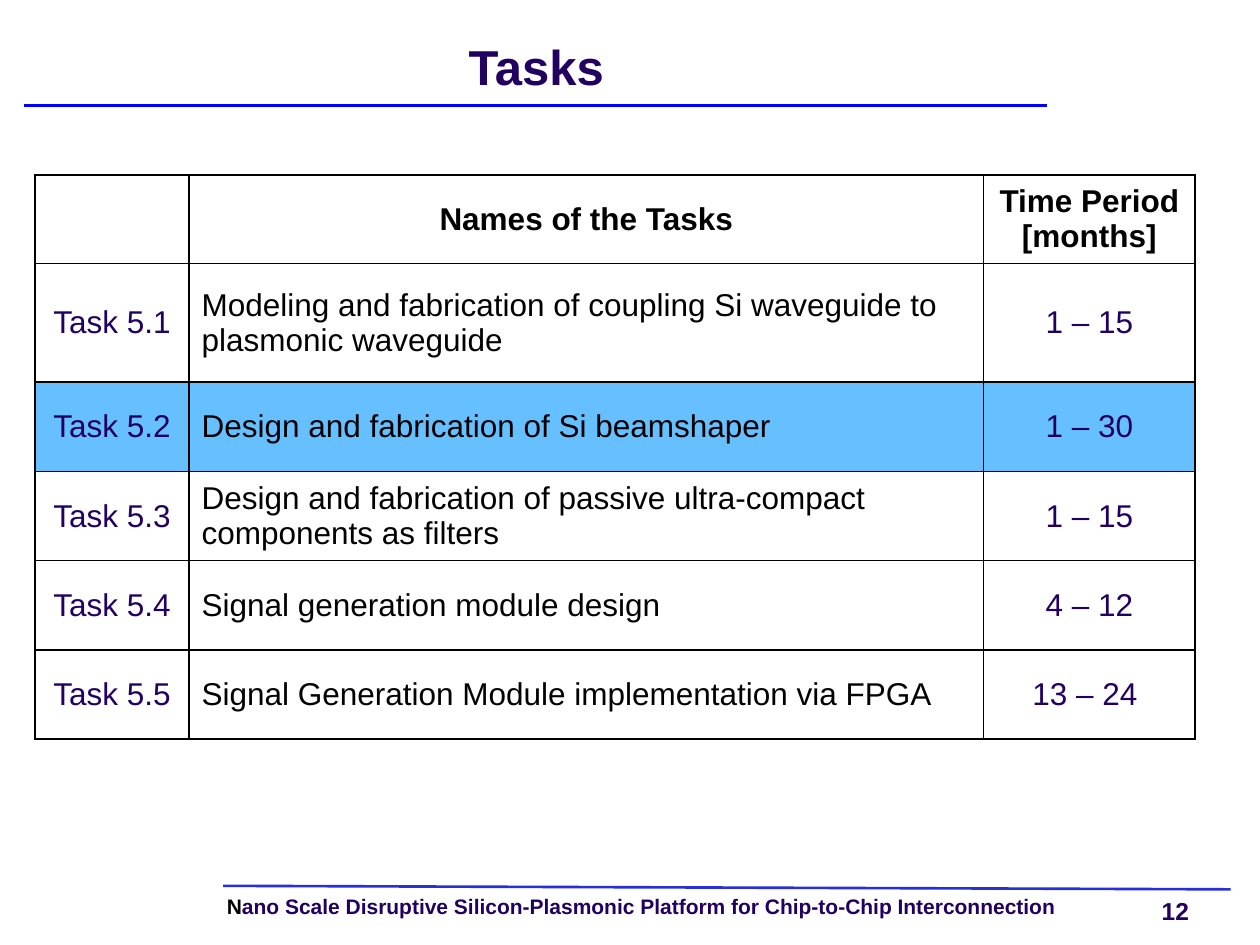
import pptx
import pptx.dml.color
import pptx.enum.shapes
import pptx.enum.text
import pptx.oxml
import pptx.oxml.ns
import pptx.util
from dataclasses import dataclass

Pt = pptx.util.Pt
ALIGN = pptx.enum.text.PP_ALIGN
ANCHOR = pptx.enum.text.MSO_ANCHOR


@dataclass(frozen=True)
class Theme:
    font: str = "Arial"
    ink: str = "220060"
    black: str = "000000"
    highlight: str = "66C0FF"
    title_rule: str = "0000FF"
    footer_rule: str = "262FDA"
    title_size: int = 28
    table_size: int = 18
    number_size: int = 14
    footer_size: int = 12
    rule_width: float = 1.5
    border_width: float = 1


def rgb(value):
    return pptx.dml.color.RGBColor.from_string(value)


def apply(target, values):
    for name, value in values.items():
        setattr(target, name, value)


class SlideBuilder:
    def __init__(self, slide, theme):
        self.slide = slide
        self.theme = theme

    def add_runs(self, paragraph, runs, size, bold, **layout):
        """Fill a paragraph with (text, colour) runs."""
        apply(paragraph, layout)
        for text, color in runs:
            run = paragraph.add_run()
            run.text = text
            apply(run.font, {"name": self.theme.font, "size": Pt(size), "bold": bold})
            run.font.color.rgb = rgb(color)

    def text(self, box, runs, size, wrap=True, anchor=ANCHOR.TOP, **layout):
        frame = self.slide.shapes.add_textbox(*map(Pt, box)).text_frame
        apply(frame, {"margin_left": 0, "margin_right": 0, "margin_top": 0,
                      "margin_bottom": 0, "word_wrap": wrap, "vertical_anchor": anchor})
        self.add_runs(frame.paragraphs[0], runs, size, True, **layout)

    def rule(self, start, end, color):
        line = self.slide.shapes.add_connector(
            pptx.enum.shapes.MSO_CONNECTOR.STRAIGHT, *map(Pt, start + end))
        line.line.color.rgb = rgb(color)
        line.line.width = Pt(self.theme.rule_width)
        line._element.spPr.append(pptx.oxml.parse_xml(
            f"<a:effectLst {pptx.oxml.ns.nsdecls('a')}/>"))

    def border(self, cell):
        properties = cell._tc.get_or_add_tcPr()
        width = int(Pt(self.theme.border_width))
        for position, side in enumerate(("lnL", "lnR", "lnT", "lnB")):
            properties.insert(position, pptx.oxml.parse_xml(
                f'<a:{side} {pptx.oxml.ns.nsdecls("a")} w="{width}"><a:solidFill>'
                f'<a:srgbClr val="{self.theme.black}"/></a:solidFill></a:{side}>'))

    def table(self, origin, widths, heights, rows, highlighted):
        """Draw a header row and body rows; one row index is highlighted."""
        theme = self.theme
        grid = self.slide.shapes.add_table(
            len(rows), len(widths),
            *map(Pt, (*origin, sum(widths), sum(heights)))).table
        apply(grid, {"first_row": False, "horz_banding": False})
        for column, width in zip(grid.columns, widths):
            column.width = Pt(width)
        for r, (height, texts) in enumerate(zip(heights, rows)):
            grid.rows[r].height = Pt(height)
            for c, text in enumerate(texts):
                cell = grid.cell(r, c)
                cell.vertical_anchor = ANCHOR.MIDDLE
                if r == highlighted:
                    cell.fill.solid()
                    cell.fill.fore_color.rgb = rgb(theme.highlight)
                else:
                    cell.fill.background()
                self.border(cell)
                header, name = r == 0, c == 1
                color = theme.black if header or name else theme.ink
                align = ALIGN.LEFT if name and not header else ALIGN.CENTER
                if text:
                    self.add_runs(cell.text_frame.paragraphs[0], [(text, color)],
                                  theme.table_size, header, alignment=align)


TASKS = [
    ("", "Names of the Tasks", "Time Period [months]"),
    ("Task 5.1", "Modeling and fabrication of coupling Si waveguide to plasmonic waveguide",
     "1 – 15"),
    ("Task 5.2", "Design and fabrication of Si beamshaper", "1 – 30"),
    ("Task 5.3", "Design and fabrication of passive ultra-compact components as filters",
     "1 – 15"),
    ("Task 5.4", "Signal generation module design", "4 – 12"),
    ("Task 5.5", "Signal Generation Module implementation via FPGA", "13 – 24 "),
]


def main():
    deck = pptx.Presentation()
    apply(deck, {"slide_width": Pt(720), "slide_height": Pt(540)})
    theme = Theme()
    page = SlideBuilder(deck.slides.add_slide(deck.slide_layouts[6]), theme)

    page.text((129.6, 512, 514, 13),
              [("N", theme.black),
               ("ano Scale Disruptive Silicon-Plasmonic Platform for "
                "Chip-to-Chip Interconnection", theme.ink)],
              theme.footer_size, line_spacing=0.9)
    page.text((663.8, 512, 29, 17), [("12", theme.ink)], theme.number_size, wrap=False)
    page.rule((127.5, 506.2), (703.2, 508.2), theme.footer_rule)
    page.rule((13.7, 60.2), (598.3, 60.2), theme.title_rule)
    page.text((14.4, 14.4, 584, 48), [("Tasks", theme.ink)], theme.title_size,
              anchor=ANCHOR.MIDDLE, alignment=ALIGN.CENTER, line_spacing=Pt(32))
    page.table((20, 100), (88, 454, 121), (48, 68) + (51,) * 4, TASKS, highlighted=2)

    deck.save("out.pptx")


if __name__ == "__main__":
    main()
